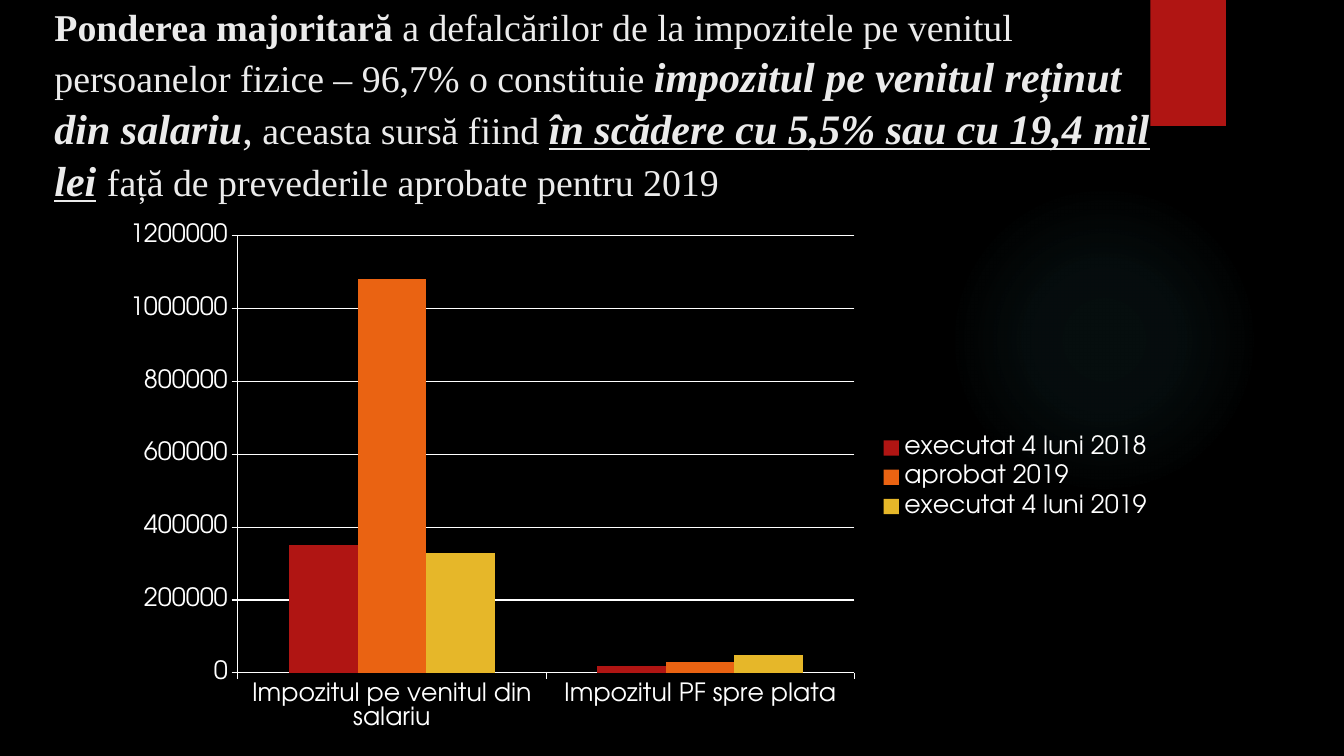
from lxml import etree
from pptx import Presentation
from pptx.chart.data import CategoryChartData
from pptx.dml.color import RGBColor
from pptx.enum.chart import XL_CHART_TYPE as ChartType, XL_LEGEND_POSITION as LegendPosition
from pptx.enum.chart import XL_TICK_MARK as TickMark
from pptx.enum.shapes import MSO_SHAPE as Shape
from pptx.enum.text import MSO_ANCHOR as Anchor, MSO_AUTO_SIZE as AutoSize, PP_ALIGN as Align
from pptx.oxml import parse_xml
from pptx.oxml.ns import qn
from pptx.util import Inches, Pt

DRAWING_NS = "http://schemas.openxmlformats.org/drawingml/2006/main"
WHITE = "FFFFFF"
HEADLINE = [
    ("Ponderea majoritară", dict(bold=True)),
    (" a defalcărilor de la impozitele pe venitul persoanelor fizice – 96,7% o constituie ", {}),
    ("impozitul pe venitul reținut din salariu", dict(size=30, bold=True, italic=True)),
    (",", dict(size=30)),
    (" aceasta sursă fiind ", {}),
    ("în scădere cu 5,5% sau cu 19,4 mil lei",
     dict(size=30, bold=True, italic=True, underline=True)),
    (" ", dict(size=30)),
    ("față de prevederile aprobate pentru 2019", {}),
]
CATEGORIES = ["Impozitul pe venitul din salariu", "Impozitul PF spre plata"]
SERIES = [
    ("executat 4 luni 2018", (350000, 20000), "B01513"),
    ("aprobat 2019", (1080000, 30000), "EA6312"),
    ("executat 4 luni 2019", (330000, 50000), "E6B729"),
]


def color(hex_string):
    return RGBColor.from_string(hex_string)


def paint(fill, hex_string):
    fill.solid()
    fill.fore_color.rgb = color(hex_string)


def add_text(paragraph, text, size=27, bold=False, italic=False, underline=False):
    run = paragraph.add_run()
    run.text = text
    font = run.font
    font.name = "Times New Roman"
    font.size = Pt(size)
    font.bold, font.italic, font.underline = bold, italic, underline
    font.color.rgb = color("EBEBEB")


def add_backdrop(slide, left, top, width, height):
    paint(slide.background.fill, "000000")
    glow = slide.shapes.add_shape(Shape.OVAL, left + Inches(9.41), top + Inches(1.83),
                                  Inches(3.08), Inches(3.08))
    glow.shadow.inherit = False
    glow.line.fill.background()
    glow.fill.background()
    stops = "".join(
        f'<a:gs pos="{position}000"><a:srgbClr val="50B9C1"><a:alpha val="{alpha}000"/>'
        "</a:srgbClr></a:gs>"
        for position, alpha in [(0, 7), (36, 6), (69, 0), (100, 0)])
    gradient = parse_xml(
        f'<a:gradFill xmlns:a="{DRAWING_NS}" rotWithShape="1"><a:gsLst>{stops}</a:gsLst>'
        '<a:path path="circle"><a:fillToRect l="50000" t="50000" r="50000" b="50000"/>'
        "</a:path></a:gradFill>")
    properties = glow.element.spPr
    properties.replace(properties.find(qn("a:noFill")), gradient)

    ribbon = slide.shapes.add_shape(Shape.RECTANGLE, left + Inches(11.41), top,
                                    Inches(0.75), Inches(1.25))
    ribbon.shadow.inherit = False
    paint(ribbon.fill, "B01513")
    ribbon.line.fill.background()
    effects = ribbon.element.spPr.find(qn("a:effectLst"))
    shadow = etree.SubElement(effects, qn("a:outerShdw"), blurRad=str(Pt(3)),
                              dist=str(Pt(2)), dir="5400000", rotWithShape="0")
    shade = etree.SubElement(shadow, qn("a:srgbClr"), val="000000")
    etree.SubElement(shade, qn("a:alpha"), val="45000")


def add_headline(slide, left, top, width, height):
    title = slide.shapes.title
    title.left, title.top, title.width, title.height = left, top, width, height
    frame = title.text_frame
    frame.word_wrap = True
    frame.auto_size = AutoSize.NONE
    frame.vertical_anchor = Anchor.MIDDLE
    paragraph = frame.paragraphs[0]
    paragraph.alignment = Align.LEFT
    paragraph.line_spacing = 1.03
    for text, style in HEADLINE:
        add_text(paragraph, text, **style)


def add_tax_chart(slide, left, top, width, height):
    data = CategoryChartData()
    data.categories = CATEGORIES
    for name, values, _ in SERIES:
        data.add_series(name, values)
    chart = slide.shapes.add_chart(ChartType.COLUMN_CLUSTERED, left, top, width, height, data).chart
    chart.has_title = False
    chart.font.name = "TeX Gyre Adventor"
    chart.font.size = Pt(18)
    chart.font.color.rgb = color(WHITE)
    chart.has_legend = True
    chart.legend.position = LegendPosition.RIGHT
    chart.legend.include_in_layout = False

    plot = chart.plots[0]
    plot.gap_width = 150
    plot.overlap = 0
    plot.vary_by_categories = False
    for series, (_, _, hex_string) in zip(plot.series, SERIES):
        paint(series.format.fill, hex_string)

    amounts = chart.value_axis
    amounts.has_major_gridlines = True
    amounts.minimum_scale, amounts.maximum_scale, amounts.major_unit = 0, 1200000, 200000
    for axis in (chart.category_axis, amounts):
        axis.major_tick_mark = TickMark.OUTSIDE
        axis.minor_tick_mark = TickMark.NONE
    for line in (chart.category_axis.format.line, amounts.format.line,
                 amounts.major_gridlines.format.line):
        paint(line.fill, WHITE)
        line.width = Pt(0.75)


def main():
    deck = Presentation()
    deck.slide_width, deck.slide_height = Inches(13.33), Inches(7.5)
    slide = deck.slides.add_slide(deck.slide_layouts[5])
    add_backdrop(slide, 0, 0, deck.slide_width, deck.slide_height)
    add_headline(slide, Inches(0.44), 0, Inches(11.12), Inches(2.06))
    add_tax_chart(slide, Inches(1.08), Inches(2.11), Inches(10.46), Inches(5.25))
    deck.save("out.pptx")


if __name__ == "__main__":
    main()
